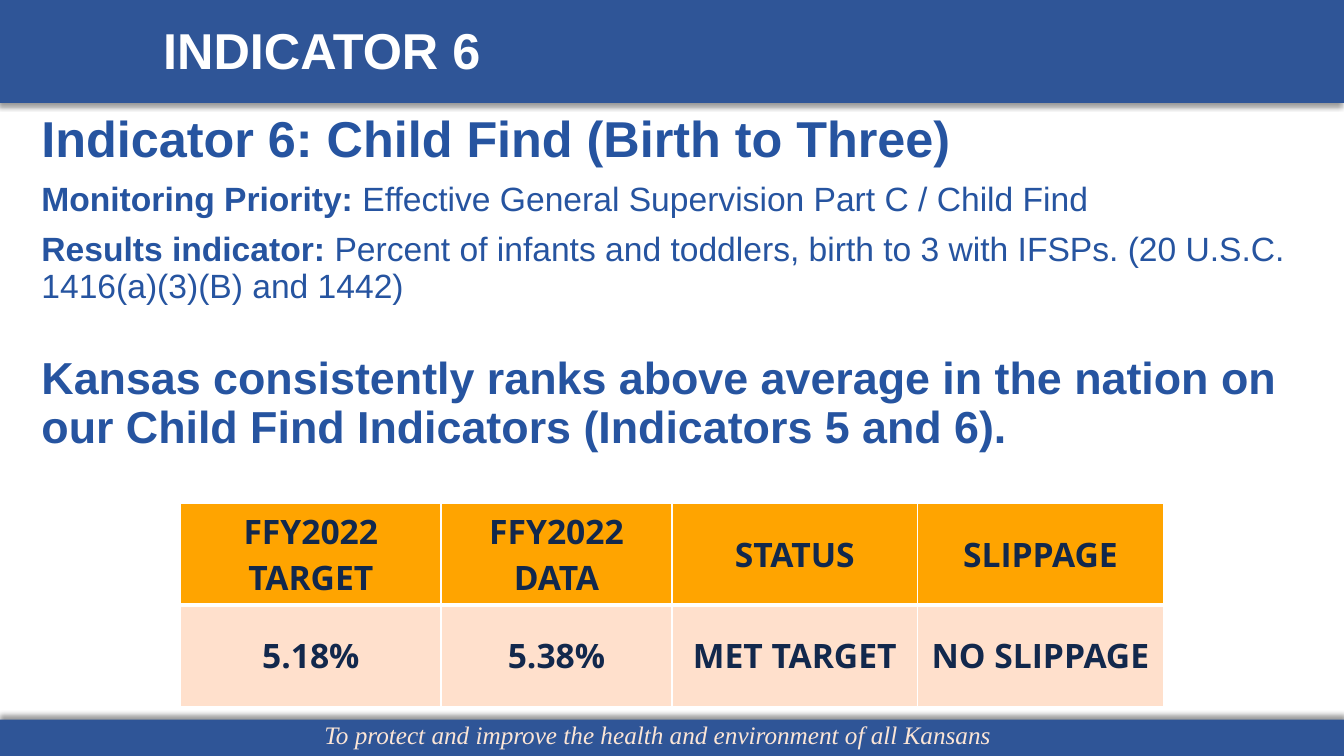
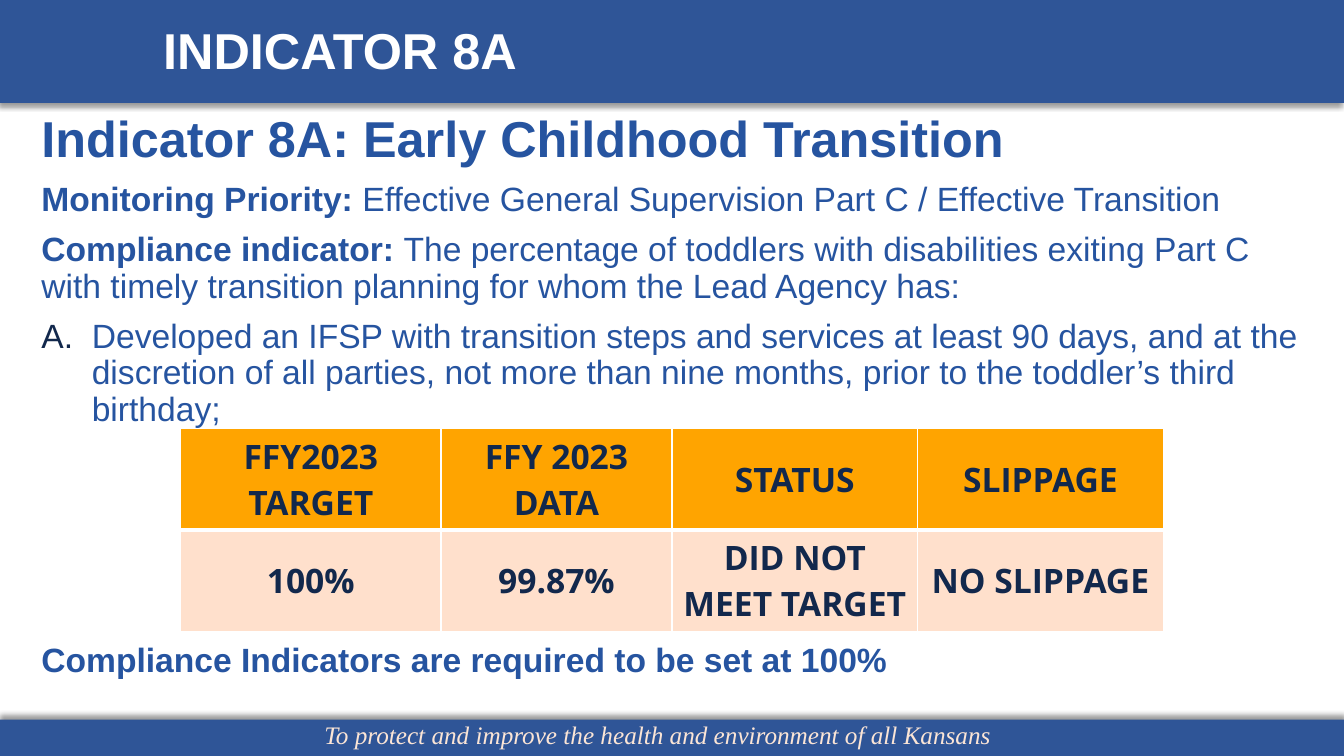
from lxml import etree
from pptx import Presentation
from pptx.dml.color import RGBColor
from pptx.enum import shapes, text
from pptx.oxml import parse_xml
from pptx.oxml.ns import nsdecls, qn
from pptx.util import Pt

COLORS = {
    "band": "2F5597", "title": "FFFFFF", "motto": "FBE5D6", "body": "2654A0",
    "dark": "12284C", "header": "FFA400", "row": "FFE0CC", "rule": "FFFFFF",
}
SLIDE_WIDTH, SLIDE_HEIGHT = 960, 540
MOTTO = "To protect and improve the health and environment of all Kansans"
COLUMN_WIDTHS = (186, 165, 175.5, 175.5)
ROW_HEIGHT = 72.5
TABLE_LEFT = 129


def rgb(name):
    """Return the palette colour called name."""
    return RGBColor.from_string(COLORS[name])


def write(paragraph, runs, size=24, color="body", font="Arial", italic=False,
          align=None, spacing=None, before=0, letter_list=False):
    """Fill a paragraph with (text, bold) runs in one format."""
    if letter_list:
        props = paragraph._p.get_or_add_pPr()
        props.set("marL", str(Pt(36)))
        props.set("indent", str(-Pt(36)))
        bullet_color = etree.SubElement(props, qn("a:buClr"))
        etree.SubElement(bullet_color, qn("a:srgbClr"), val=COLORS["dark"])
        etree.SubElement(props, qn("a:buFont"), typeface=font)
        etree.SubElement(props, qn("a:buAutoNum"), type="alphaUcPeriod")
    paragraph.alignment = align
    paragraph.line_spacing = spacing
    paragraph.space_before = Pt(before)
    for words, bold in runs:
        run = paragraph.add_run()
        run.text = words
        run.font.size, run.font.name = Pt(size), font
        run.font.bold, run.font.italic = bold, italic
        run.font.color.rgb = rgb(color)


def add_text(slide, box, paragraphs, anchor=text.MSO_ANCHOR.TOP, **shared):
    """Place a text box holding (runs, format) paragraphs."""
    frame = slide.shapes.add_textbox(*map(Pt, box)).text_frame
    frame.word_wrap = True
    frame.vertical_anchor = anchor
    for index, (runs, own) in enumerate(paragraphs):
        paragraph = frame.add_paragraph() if index else frame.paragraphs[0]
        write(paragraph, runs, **{**shared, **own})


def add_band(slide, top, height, shadow_angle):
    """Draw a full-width band whose shadow falls at the given angle."""
    band = slide.shapes.add_shape(shapes.MSO_SHAPE.RECTANGLE, 0, Pt(top),
                                  Pt(SLIDE_WIDTH), Pt(height))
    band.fill.solid()
    band.fill.fore_color.rgb = rgb("band")
    band.line.fill.background()
    band.shadow.inherit = False
    effects = band._element.spPr.find(qn("a:effectLst"))
    effects.append(parse_xml(
        f'<a:outerShdw {nsdecls("a")} blurRad="{Pt(4)}" dist="{Pt(3)}" '
        f'dir="{shadow_angle * 60000}" algn="t" rotWithShape="0">'
        '<a:srgbClr val="000000"><a:alpha val="40000"/></a:srgbClr></a:outerShdw>'))


def add_frame(slide, title):
    """Add the bands, motto and title that every slide shares."""
    add_band(slide, 0, 73.5, 135)
    add_band(slide, 514, SLIDE_HEIGHT - 514, 270)
    add_text(slide, (224.6, 510, 509, 29), [([(MOTTO, False)], {})],
             size=18, color="motto", font="Times New Roman", italic=True)
    add_text(slide, (109.5, 16.5, 768, 43), [([(title, True)], {})],
             anchor=text.MSO_ANCHOR.MIDDLE, size=36, color="title", spacing=0.9)


def add_body(slide, top, height, paragraphs):
    """Place body paragraphs across the content width."""
    spaced = [(runs, {"before": 10 if index else 0, **own})
              for index, (runs, own) in enumerate(paragraphs)]
    add_text(slide, (22.5, top, 915, height), spaced, spacing=0.9)


def set_borders(cell, bottom):
    """Rule a cell in white with the given bottom and top widths."""
    props = cell._tc.get_or_add_tcPr()
    top = 1 if bottom == 3 else 3
    for index, (side, width) in enumerate(
            (("lnL", 1), ("lnR", 1), ("lnT", top), ("lnB", bottom))):
        props.insert(index, parse_xml(
            f'<a:{side} {nsdecls("a")} w="{Pt(width)}"><a:solidFill>'
            f'<a:srgbClr val="{COLORS["rule"]}"/></a:solidFill></a:{side}>'))


def add_results(slide, top, rows):
    """Add the table of target, data, status and slippage."""
    table = slide.shapes.add_table(
        len(rows), len(COLUMN_WIDTHS), Pt(TABLE_LEFT), Pt(top),
        Pt(sum(COLUMN_WIDTHS)), Pt(ROW_HEIGHT * len(rows))).table
    for column, width in zip(table.columns, COLUMN_WIDTHS):
        column.width = Pt(width)
    for row_index, values in enumerate(rows):
        table.rows[row_index].height = Pt(ROW_HEIGHT)
        for column_index, value in enumerate(values):
            cell = table.cell(row_index, column_index)
            cell.vertical_anchor = text.MSO_ANCHOR.MIDDLE
            cell.fill.solid()
            cell.fill.fore_color.rgb = rgb("row" if row_index else "header")
            set_borders(cell, 1 if row_index else 3)
            write(cell.text_frame.paragraphs[0], [(value, True)], color="dark",
                  font="Open Sans", align=text.PP_ALIGN.CENTER)


def add_indicator_slide(deck, title, paragraphs, table_top, rows, note=None):
    """Build one indicator slide with its body, table and closing note."""
    slide = deck.slides.add_slide(deck.slide_layouts[6])
    add_frame(slide, title)
    add_body(slide, 78, 250, paragraphs)
    add_results(slide, table_top, rows)
    if note:
        add_body(slide, 456, 34, [([(note, True)], {})])


def main():
    """Build the deck and save it."""
    deck = Presentation()
    deck.slide_width, deck.slide_height = Pt(SLIDE_WIDTH), Pt(SLIDE_HEIGHT)
    add_indicator_slide(
        deck, "INDICATOR 6",
        [([("Indicator 6: Child Find (Birth to Three)", True)], {"size": 36}),
         ([("Monitoring Priority: ", True),
           ("Effective General Supervision Part C / Child Find", False)], {}),
         ([("Results indicator:", True),
           (" Percent of infants and toddlers, birth to 3 with IFSPs. "
            "(20 U.S.C. 1416(a)(3)(B) and 1442)", False)], {}),
         ([("Kansas consistently ranks above average in the nation on our "
            "Child Find Indicators (Indicators 5 and 6).", True)],
          {"size": 32, "before": 36})],
        359.5,
        [("FFY2022 TARGET", "FFY2022 DATA", "STATUS", "SLIPPAGE"),
         ("5.18%", "5.38%", "MET TARGET", "NO SLIPPAGE")])
    add_indicator_slide(
        deck, "INDICATOR 8A",
        [([("Indicator 8A: Early Childhood Transition", True)], {"size": 36}),
         ([("Monitoring Priority: ", True),
           ("Effective General Supervision Part C / Effective Transition",
            False)], {}),
         ([("Compliance indicator: ", True),
           ("The percentage of toddlers with disabilities exiting Part C with "
            "timely transition planning for whom the Lead Agency has:",
            False)], {}),
         ([("Developed an IFSP with transition steps and services at least 90 "
            "days, and at the discretion of all parties, not more than nine "
            "months, prior to the toddler’s third birthday;", False)],
          {"letter_list": True})],
        306,
        [("FFY2023 TARGET", "FFY 2023 DATA", "STATUS", "SLIPPAGE"),
         ("100%", "99.87%", "DID NOT MEET TARGET", "NO SLIPPAGE")],
        note="Compliance Indicators are required to be set at 100%")
    deck.save("out.pptx")


if __name__ == "__main__":
    main()
